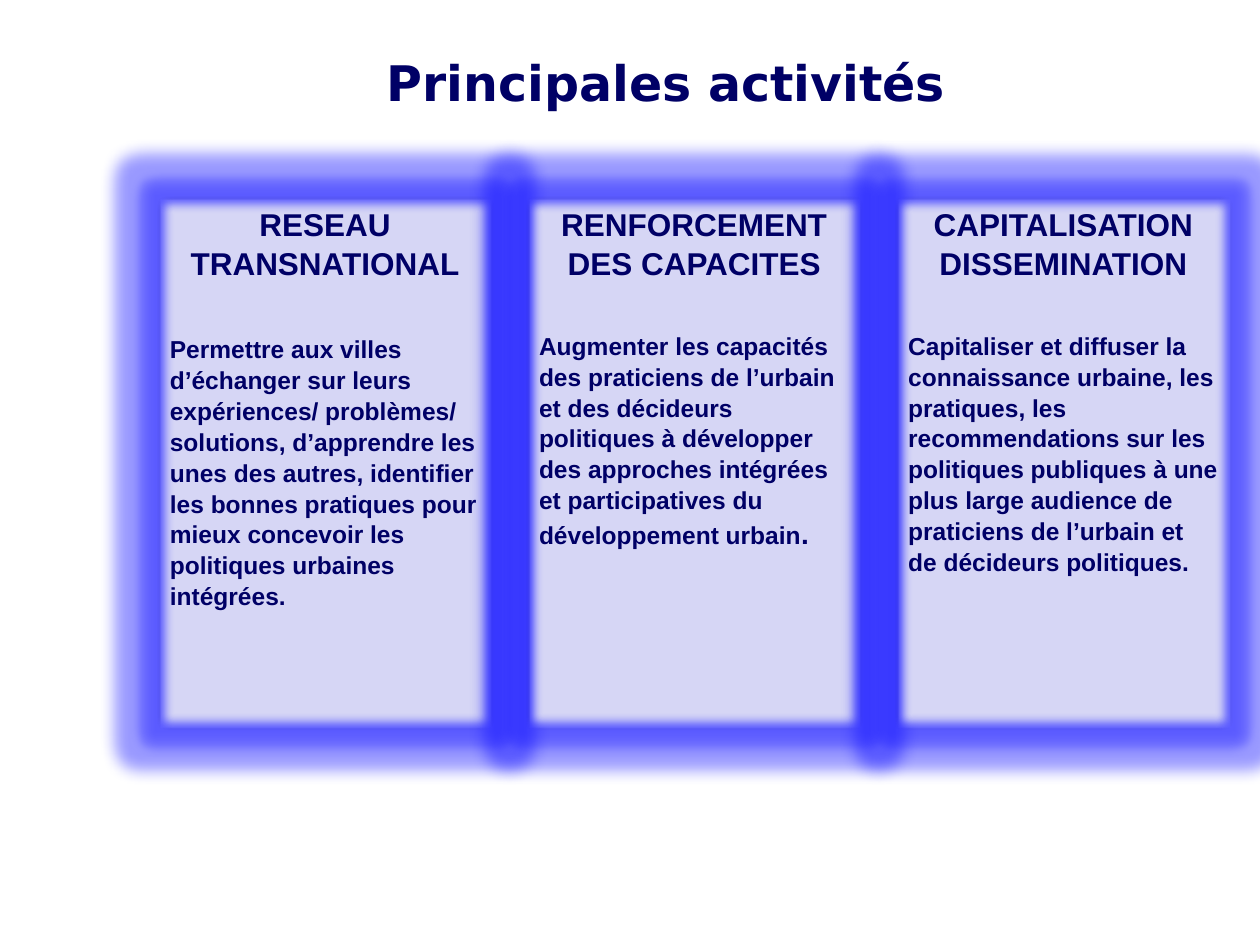
from lxml.etree import SubElement
from pptx import Presentation
from pptx.dml.color import RGBColor
from pptx.enum.shapes import MSO_SHAPE as Shape
from pptx.enum.text import MSO_ANCHOR as Anchor, PP_ALIGN as Align
from pptx.oxml.ns import qn
from pptx.util import Inches, Pt

NAVY, LAVENDER, BORDER, GLOW = "000066", "D6D6F5", "1E1E87", "0000FF"
PANELS = [
    (["RESEAU TRANSNATIONAL"], 29,
     [("Permettre aux villes d’échanger sur leurs expériences/ problèmes/ solutions, "
       "d’apprendre les unes des autres, identifier les bonnes pratiques pour mieux "
       "concevoir les politiques urbaines intégrées.", 14)]),
    (["RENFORCEMENT DES CAPACITES"], 27,
     [("Augmenter les capacités des praticiens de l’urbain et des décideurs politiques "
       "à développer des approches intégrées et participatives du développement urbain", 14),
      (".", 16)]),
    (["CAPITALISATION", "DISSEMINATION"], 27,
     [("Capitaliser et diffuser la connaissance urbaine, les pratiques, les "
       "recommendations sur les politiques publiques à une plus large audience de "
       "praticiens de l’urbain et de décideurs politiques.", 14)]),
]


def color(value):
    return RGBColor.from_string(value)


class ActivitySlide:
    """Draws a title and a row of glowing panels on one slide."""

    left, top, step, width, height = 1.25, 1.56, 2.93, 2.66, 4.22

    def __init__(self, presentation):
        self.slide = presentation.slides.add_slide(presentation.slide_layouts[5])

    def add_runs(self, paragraph, runs, align, font="Arial", before=0):
        paragraph.alignment = align
        paragraph.line_spacing = 1.05
        paragraph.space_before = Pt(before)
        for text, size in runs:
            run = paragraph.add_run()
            run.text = text
            run.font.name = font
            run.font.size = Pt(size)
            run.font.bold = True
            run.font.color.rgb = color(NAVY)

    def add_title(self, text):
        shape = self.slide.shapes.title
        shape.left, shape.top = Inches(1.33), Inches(0.39)
        shape.width, shape.height = Inches(7.91), Inches(0.57)
        frame = shape.text_frame
        frame.margin_left = frame.margin_right = frame.margin_top = frame.margin_bottom = 0
        frame.vertical_anchor = Anchor.TOP
        self.add_runs(frame.paragraphs[0], [(text, 28)], Align.CENTER, "DejaVu Sans")

    def add_glow(self, shape):
        shape.shadow.inherit = False
        effects = shape._element.spPr.find(qn("a:effectLst"))
        glow = SubElement(effects, qn("a:glow"), rad=str(Pt(18)))
        tint = SubElement(glow, qn("a:srgbClr"), val=GLOW)
        SubElement(tint, qn("a:alpha"), val="40000")
        SubElement(effects, qn("a:softEdge"), rad=str(Pt(5)))

    def add_panel(self, column, headings, gap, body):
        shape = self.slide.shapes.add_shape(
            Shape.RECTANGLE, Inches(self.left + column * self.step), Inches(self.top),
            Inches(self.width), Inches(self.height))
        shape.fill.solid()
        shape.fill.fore_color.rgb = color(LAVENDER)
        shape.line.color.rgb = color(BORDER)
        shape.line.width = Pt(2)
        self.add_glow(shape)
        frame = shape.text_frame
        frame.word_wrap = True
        frame.vertical_anchor = Anchor.TOP
        for index, heading in enumerate(headings):
            paragraph = frame.add_paragraph() if index else frame.paragraphs[0]
            self.add_runs(paragraph, [(heading, 18)], Align.CENTER)
        self.add_runs(frame.add_paragraph(), body, Align.LEFT, before=gap)


def main():
    presentation = Presentation()
    presentation.slide_width, presentation.slide_height = Inches(10), Inches(7.5)
    page = ActivitySlide(presentation)
    page.add_title("Principales activités")
    for column, panel in enumerate(PANELS):
        page.add_panel(column, *panel)
    presentation.save("out.pptx")


if __name__ == "__main__":
    main()
